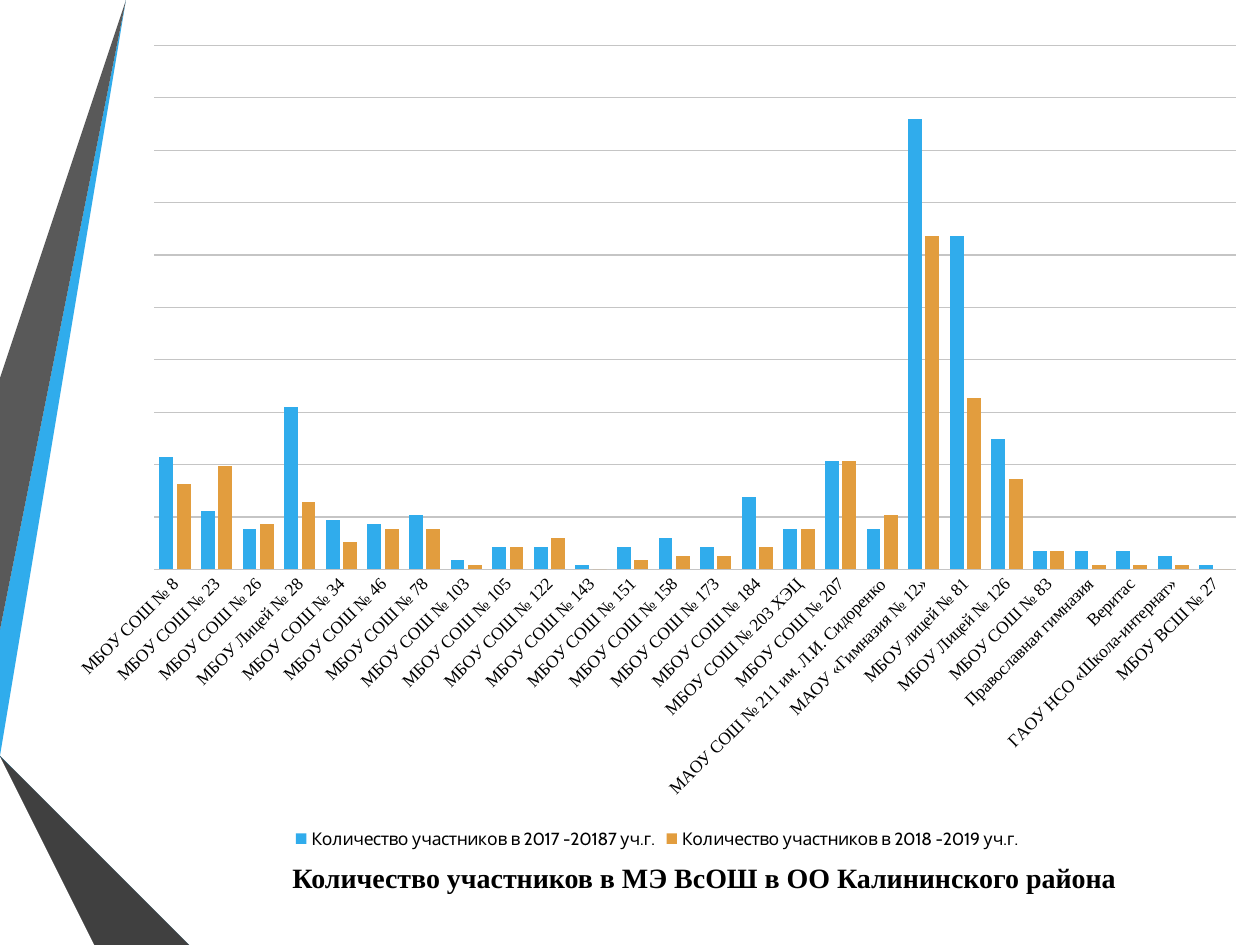
from pptx import Presentation
from pptx.chart import data as cd
from pptx.dml import color as dc
from pptx.enum import chart as ec, text as et
from pptx.oxml import parse_xml
from pptx.oxml import ns
from pptx.util import Inches, Pt

HEX = {
    "blue": "30ACEC", "gray": "595959", "ink": "262626", "deep": "0C5A82",
    "mid": "1287C3", "dark": "404040", "gold": "E29D3E", "grid": "C5C5C5",
    "black": "000000",
}
SERIF = "Times New Roman"
SANS = "Cabin"

BANDS = [
    ("blue", [(0, 5.44), (0, 5.75), (0.22, 5.79), (1.17, 0), (0.89, 0)]),
    ("gray", [(0.83, 0), (0.55, 0), (0, 3.36), (0, 5.06)]),
    ("ink", [(0, 6.19), (0, 6.21), (0.93, 7.5), (0.99, 7.5)]),
    ("deep", [(0, 5.79), (0, 5.8), (1.56, 7.5), (1.63, 7.5)]),
    ("mid", [(0, 5.79), (1.63, 7.5), (2.33, 7.5), (0.22, 5.79), (0, 5.75)]),
    ("dark", [(0, 6.19), (0.99, 7.5), (1.51, 7.5), (0, 5.86)]),
]

SCHOOLS = [
    ("МБОУ СОШ № 8", 25, 19),
    ("МБОУ СОШ № 23", 13, 23),
    ("МБОУ СОШ № 26", 9, 10),
    ("МБОУ Лицей № 28", 36, 15),
    ("МБОУ СОШ № 34", 11, 6),
    ("МБОУ СОШ № 46", 10, 9),
    ("МБОУ СОШ № 78", 12, 9),
    ("МБОУ СОШ № 103", 2, 1),
    ("МБОУ СОШ № 105", 5, 5),
    ("МБОУ СОШ № 122", 5, 7),
    ("МБОУ СОШ № 143", 1, 0),
    ("МБОУ СОШ № 151", 5, 2),
    ("МБОУ СОШ № 158", 7, 3),
    ("МБОУ СОШ № 173", 5, 3),
    ("МБОУ СОШ № 184", 16, 5),
    ("МБОУ СОШ № 203 ХЭЦ", 9, 9),
    ("МБОУ СОШ № 207", 24, 24),
    ("МАОУ СОШ № 211 им. Л.И. Сидоренко", 9, 12),
    ("МАОУ «Гимназия № 12»", 100, 74),
    ("МБОУ лицей № 81", 74, 38),
    ("МБОУ Лицей № 126", 29, 20),
    ("МБОУ СОШ № 83", 4, 4),
    ("Православная гимназия", 4, 1),
    ("Веритас", 4, 1),
    ("ГАОУ НСО «Школа-интернат»", 3, 1),
    ("МБОУ ВСШ № 27", 1, 0),
]
YEARS = [
    ("Количество участников в 2017 -20187 уч.г.", "blue"),
    ("Количество участников в 2018 -2019 уч.г.", "gold"),
]
STEP = 11.63


def rgb(key):
    return dc.RGBColor.from_string(HEX[key])


def put(item, **vals):
    for name, val in vals.items():
        setattr(item, name, val)


def paint(fill, key):
    fill.solid()
    fill.fore_color.rgb = rgb(key)


def style(font, face, size, bold=False):
    put(font, name=face, size=Pt(size), bold=bold)
    font.color.rgb = rgb("black")


def rule(line):
    line.width = Pt(0.75)
    line.color.rgb = rgb("grid")


def add_band(slide, key, pts):
    pen = slide.shapes.build_freeform(*pts[0], scale=Inches(1))
    pen.add_line_segments(pts[1:], close=True)
    band = pen.convert_to_shape()
    band.shadow.inherit = False
    paint(band.fill, key)
    band.line.fill.background()


def set_plot(chart, x, y, w, h):
    area = chart.plots[0]._element.getparent()
    for old in area.findall(ns.qn("c:layout")):
        area.remove(old)
    sizes = "".join(f'<c:{tag} val="{val}"/>'
                    for tag, val in zip("xywh", (x, y, w, h)))
    area.insert(0, parse_xml(
        f'<c:layout {ns.nsdecls("c")}><c:manualLayout>'
        '<c:layoutTarget val="inner"/><c:xMode val="edge"/>'
        f'<c:yMode val="edge"/>{sizes}</c:manualLayout></c:layout>'))


def add_bars(slide, at):
    names, *cols = zip(*SCHOOLS)
    data = cd.CategoryChartData()
    data.categories = names
    for (year, _), vals in zip(YEARS, cols):
        data.add_series(year, vals)
    chart = slide.shapes.add_chart(
        ec.XL_CHART_TYPE.COLUMN_CLUSTERED, *map(Inches, at), data).chart
    put(chart, has_title=False, has_legend=True)
    style(chart.font, SANS, 10)
    put(chart.legend, position=ec.XL_LEGEND_POSITION.BOTTOM,
        include_in_layout=False)
    style(chart.legend.font, SANS, 10)

    plot = chart.plots[0]
    put(plot, gap_width=75, overlap=-25, vary_by_categories=False)
    for bars, (_, key) in zip(plot.series, YEARS):
        paint(bars.format.fill, key)

    cats, vals = chart.category_axis, chart.value_axis
    none = ec.XL_TICK_MARK.NONE
    for axis in (cats, vals):
        put(axis, major_tick_mark=none, minor_tick_mark=none)
    style(cats.tick_labels.font, SERIF, 10)
    cats._element.find(".//" + ns.qn("a:bodyPr")).set("rot", "-2700000")
    rule(cats.format.line)
    put(vals, minimum_scale=0, maximum_scale=10 * STEP, major_unit=STEP,
        has_major_gridlines=True,
        tick_label_position=ec.XL_TICK_LABEL_POSITION.NONE)
    vals.format.line.fill.background()
    rule(vals.major_gridlines.format.line)
    set_plot(chart, 0.083, 0.02, 0.897, 0.635)


def set_title(slide, words, at):
    title = slide.shapes.title
    put(title, **dict(zip(("left", "top", "width", "height"),
                          map(Inches, at))))
    frame = title.text_frame
    put(frame, text=words, word_wrap=True,
        auto_size=et.MSO_AUTO_SIZE.NONE, vertical_anchor=et.MSO_ANCHOR.TOP)
    para = frame.paragraphs[0]
    para.alignment = et.PP_ALIGN.CENTER
    style(para.runs[0].font, SERIF, 16, True)


def main():
    deck = Presentation()
    put(deck, slide_width=Inches(10), slide_height=Inches(7.5))
    slide = deck.slides.add_slide(deck.slide_layouts[5])
    for key, pts in BANDS:
        add_band(slide, key, pts)
    add_bars(slide, (0.43, 0.23, 9.57, 6.55))
    set_title(slide, "Количество участников в МЭ ВсОШ в ОО Калининского района",
              (1.99, 6.78, 7.2, 0.37))
    deck.save("out.pptx")


if __name__ == "__main__":
    main()
